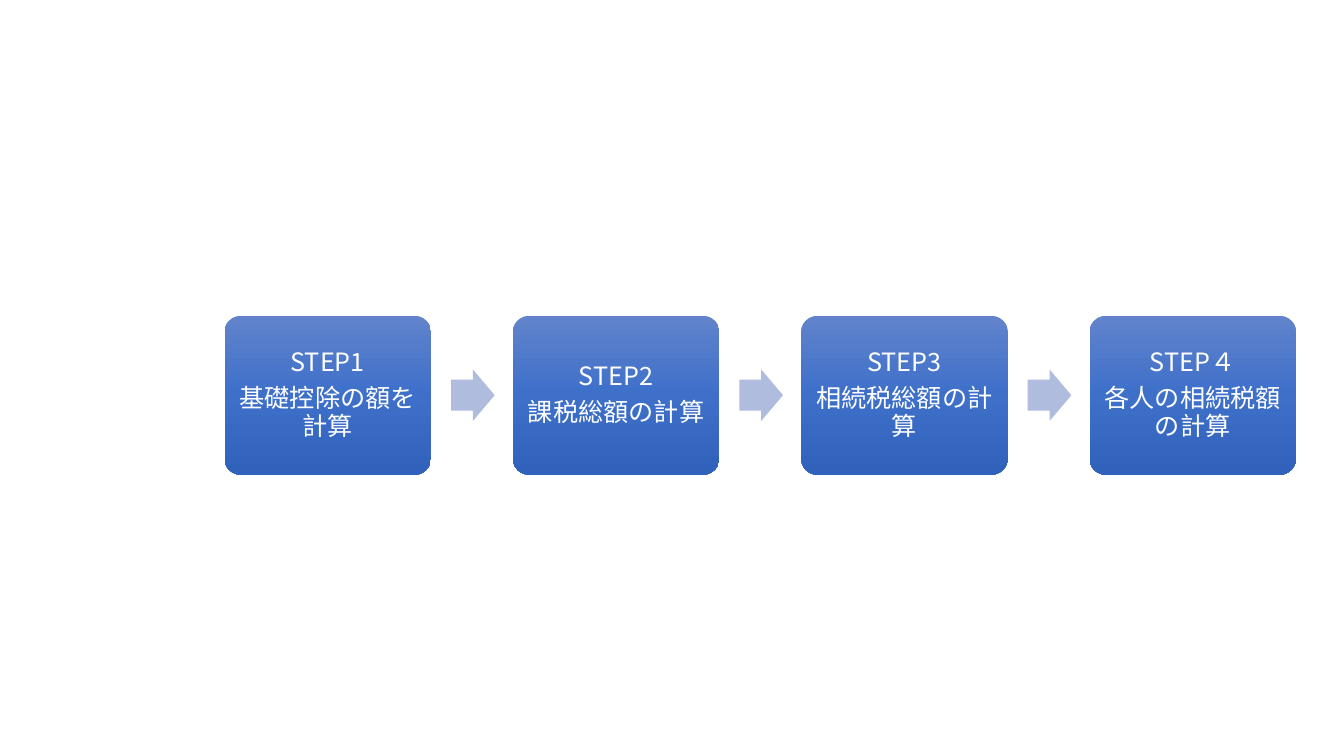
from copy import deepcopy

from lxml.etree import SubElement
from pptx import Presentation
from pptx.dml.color import RGBColor
from pptx.enum.shapes import MSO_SHAPE
from pptx.enum.text import MSO_ANCHOR, PP_ALIGN
from pptx.oxml.ns import qn
from pptx.util import Cm, Pt

COLORS = {
    "top": "6183CB",
    "middle": "3E70CA",
    "bottom": "3062BB",
    "arrow": "B0BCDE",
    "text": "FFFFFF",
}
FONT = "Noto Sans CJK JP"
STEPS = [
    ("STEP1", "基礎控除の額を計算"),
    ("STEP2", "課税総額の計算"),
    ("STEP3", "相続税総額の計算"),
    ("STEP４", "各人の相続税額の計算"),
]


def color(name):
    """Return the named palette colour."""
    return RGBColor.from_string(COLORS[name])


def fill_gradient(shape):
    """Fill a shape from top to bottom with the three blues."""
    fill = shape.fill
    fill.gradient()
    fill.gradient_angle = 270
    first = shape._element.spPr.find(".//" + qn("a:gs"))
    first.addnext(deepcopy(first))
    for stop, name, position in zip(fill.gradient_stops, ("top", "middle", "bottom"), (0, 0.5, 1)):
        stop.color.rgb = color(name)
        stop.position = position


def add_line(para, text):
    """Write one centred line of a step."""
    para.alignment = PP_ALIGN.CENTER
    para.line_spacing = 0.9
    para.space_after = Pt(6.3)
    span = para.add_run()
    span.text = text
    span.font.size = Pt(18)
    span.font.name = FONT
    span.font.color.rgb = color("text")
    SubElement(span.font._element, qn("a:ea"), typeface=FONT)


def add_step(page, left, top, width, height, lines):
    """Place one rounded step with its number and task."""
    box = page.shapes.add_shape(MSO_SHAPE.ROUNDED_RECTANGLE, left, top, width, height)
    box.adjustments[0] = 0.1
    box.shadow.inherit = False
    box.line.fill.background()
    fill_gradient(box)
    frame = box.text_frame
    frame.word_wrap = True
    frame.vertical_anchor = MSO_ANCHOR.MIDDLE
    frame.margin_left = frame.margin_right = Cm(0.18)
    frame.margin_top = frame.margin_bottom = Cm(0.18)
    for index, text in enumerate(lines):
        para = frame.add_paragraph() if index else frame.paragraphs[0]
        add_line(para, text)


def add_arrow(page, left, middle):
    """Place an arrow to the next step, centred on a height."""
    width, height = Cm(1.1), Cm(1.3)
    arrow = page.shapes.add_shape(MSO_SHAPE.RIGHT_ARROW, left, middle - height // 2, width, height)
    arrow.adjustments[0] = 0.6
    arrow.adjustments[1] = 0.5
    arrow.shadow.inherit = False
    arrow.fill.solid()
    arrow.fill.fore_color.rgb = color("arrow")
    arrow.line.fill.background()


def add_process(page, left, top, width, height):
    """Spread the steps evenly over the box, with arrows between."""
    step_width = Cm(5.2)
    pitch = (width - step_width) // (len(STEPS) - 1)
    for index, lines in enumerate(STEPS):
        step_left = left + index * pitch
        if index:
            add_arrow(page, step_left - Cm(1.56), top + height // 2)
        add_step(page, step_left, top, step_width, height, lines)


def main():
    """Build and save the deck."""
    deck = Presentation()
    deck.slide_width, deck.slide_height = Cm(33.87), Cm(19.05)
    page = deck.slides.add_slide(deck.slide_layouts[6])
    add_process(page, Cm(5.66), Cm(7.96), Cm(27), Cm(4))
    deck.save("out.pptx")


if __name__ == "__main__":
    main()
